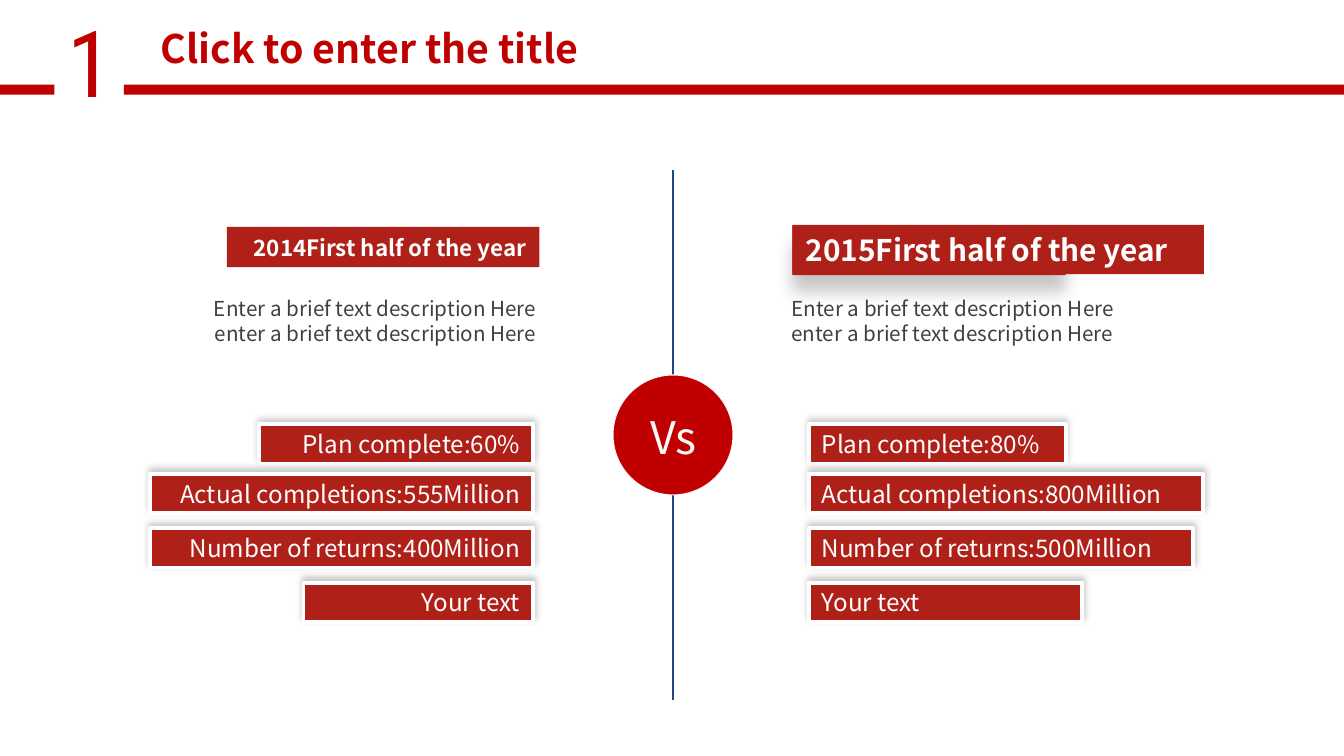
from lxml import etree
from pptx import Presentation
from pptx.dml.color import RGBColor
from pptx.enum.shapes import MSO_CONNECTOR, MSO_SHAPE
from pptx.enum.text import MSO_ANCHOR, MSO_AUTO_SIZE, PP_ALIGN
from pptx.oxml.ns import qn
from pptx.util import Inches, Pt

RECTANGLE, ROUNDED, OVAL = MSO_SHAPE.RECTANGLE, MSO_SHAPE.ROUNDED_RECTANGLE, MSO_SHAPE.OVAL
STRAIGHT = MSO_CONNECTOR.STRAIGHT
LEFT, CENTER, RIGHT = PP_ALIGN.LEFT, PP_ALIGN.CENTER, PP_ALIGN.RIGHT
TOP, MIDDLE = MSO_ANCHOR.TOP, MSO_ANCHOR.MIDDLE
NO_AUTOFIT = MSO_AUTO_SIZE.NONE

COLORS = {"red": "C00000", "brick": "AF2019", "white": "FFFFFF", "off_white": "F8F8F8",
          "gray": "404040", "navy": "1F497D", "black": "000000"}
SANS, CONDENSED = "Noto Sans CJK SC", "Roboto Condensed"
WIDE_INSETS, NORMAL_INSETS = (0.13, 0.07), (0.1, 0.05)
BAR_TOPS = (4.21, 4.7, 5.24, 5.78)
BAR_HEIGHT = 0.39


def color(name):
    return RGBColor.from_string(COLORS[name])


def write(shape, text, size, tint, align=LEFT, anchor=TOP, bold=False,
          font=SANS, insets=WIDE_INSETS, wrap=True):
    frame = shape.text_frame
    frame.auto_size = NO_AUTOFIT
    frame.word_wrap = wrap
    frame.vertical_anchor = anchor
    frame.margin_left = frame.margin_right = Inches(insets[0])
    frame.margin_top = frame.margin_bottom = Inches(insets[1])
    para = frame.paragraphs[0]
    para.alignment = align
    span = para.add_run()
    span.text = text
    span.font.size = Pt(size)
    span.font.bold = bold
    span.font.name = font
    span.font.color.rgb = color(tint)
    east_asian = etree.SubElement(span.font._element, qn("a:ea"))
    east_asian.set("typeface", font)


def add_text(page, box, text, size, tint, **style):
    shape = page.shapes.add_textbox(*map(Inches, box))
    write(shape, text, size, tint, **style)


def add_block(page, kind, box, fill, line=None, line_width=0.75):
    shape = page.shapes.add_shape(kind, *map(Inches, box))
    shape.shadow.inherit = False
    shape.fill.solid()
    shape.fill.fore_color.rgb = color(fill)
    if line:
        shape.line.color.rgb = color(line)
        shape.line.width = Pt(line_width)
    else:
        shape.line.fill.background()
    return shape


def add_shadow(shape, blur, distance, degrees):
    effects = shape._element.spPr.find(qn("a:effectLst"))
    shadow = etree.SubElement(effects, qn("a:outerShdw"), blurRad=str(Pt(blur)),
                              dist=str(Pt(distance)), dir=str(degrees * 60000),
                              algn="ctr", rotWithShape="0")
    tint = etree.SubElement(shadow, qn("a:srgbClr"), val=COLORS["black"])
    etree.SubElement(tint, qn("a:alpha"), val="22000")


def add_header(page, box, number, title):
    left, top, width, height = box
    add_text(page, (left + 0.57, top, 0.34, 1.21), number, 66, "red",
             font=CONDENSED, insets=NORMAL_INSETS)
    rule_top = top + height - 0.1
    add_block(page, RECTANGLE, (left, rule_top, 0.54, 0.1), "red")
    add_block(page, RECTANGLE, (left + 1.23, rule_top, width - 1.23, 0.1), "red")
    heading = page.shapes.title
    heading.left, heading.top = Inches(left + 1.24), Inches(top + 0.19)
    heading.width, heading.height = Inches(4.85), Inches(0.57)
    write(heading, title, 28, "red", align=CENTER, bold=True, insets=NORMAL_INSETS)


def add_divider(page, box):
    """Draw the centre line broken by the Vs disc."""
    left, top, width, height = box
    center = left + width / 2
    disc_top = top + (height - width) / 2
    for start, end in ((top, disc_top), (disc_top + width, top + height)):
        line = page.shapes.add_connector(STRAIGHT, Inches(center), Inches(start),
                                         Inches(center), Inches(end))
        line.line.color.rgb = color("navy")
        line.line.width = Pt(0.75)
        etree.SubElement(line._element.spPr, qn("a:effectLst"))
    add_block(page, OVAL, (left, disc_top, width, width), "red", "off_white")
    add_text(page, (left + 0.24, disc_top + 0.27, 0.83, 0.67), "Vs", 32, "off_white",
             wrap=False)


def add_heading(page, box, text, size, align):
    heading = add_block(page, RECTANGLE, box, "brick")
    write(heading, text, size, "white", align=align, bold=True, wrap=False)


def add_description(page, box, align):
    add_text(page, box, "Enter a brief text description Here enter a brief text description Here",
             14.7, "gray", align=align)


def add_bars(page, edge, bars, align):
    """Stack bars that share the inner edge and grow away from the centre."""
    for top, (text, width) in zip(BAR_TOPS, bars):
        left = edge - width if align == RIGHT else edge
        bar = add_block(page, RECTANGLE, (left, top, width, BAR_HEIGHT), "brick", "white", 2.75)
        add_shadow(bar, 5, 3, 275)
        write(bar, text, 17.3, "white", align=align, anchor=MIDDLE)


def main():
    deck = Presentation()
    deck.slide_width, deck.slide_height = Inches(13.33), Inches(7.5)
    page = deck.slides.add_slide(deck.slide_layouts[5])
    add_header(page, (0, 0, 13.33, 0.94), "1", "Click to enter the title")
    add_divider(page, (6.08, 1.69, 1.19, 5.25))

    add_heading(page, (2.25, 2.25, 3.1, 0.4), "2014First half of the year", 16, RIGHT)
    add_description(page, (1.47, 2.87, 3.98, 0.63), RIGHT)
    add_bars(page, 5.29, (("Plan complete:60%", 2.72),
                          ("Actual completions:555Million", 3.8),
                          ("Number of returns:400Million", 3.8),
                          ("Your text", 2.28)), RIGHT)

    backing = add_block(page, ROUNDED, (7.86, 2.24, 2.71, 0.49), "brick")
    backing.adjustments[0] = 0
    add_shadow(backing, 12, 12, 90)
    add_heading(page, (7.86, 2.23, 4.08, 0.49), "2015First half of the year", 21.3, LEFT)
    add_description(page, (7.72, 2.87, 3.98, 0.63), LEFT)
    add_bars(page, 8.02, (("Plan complete:80%", 2.55),
                          ("Actual completions:800Million", 3.91),
                          ("Number of returns:500Million", 3.81),
                          ("Your text", 2.71)), LEFT)
    deck.save("out.pptx")


if __name__ == "__main__":
    main()
